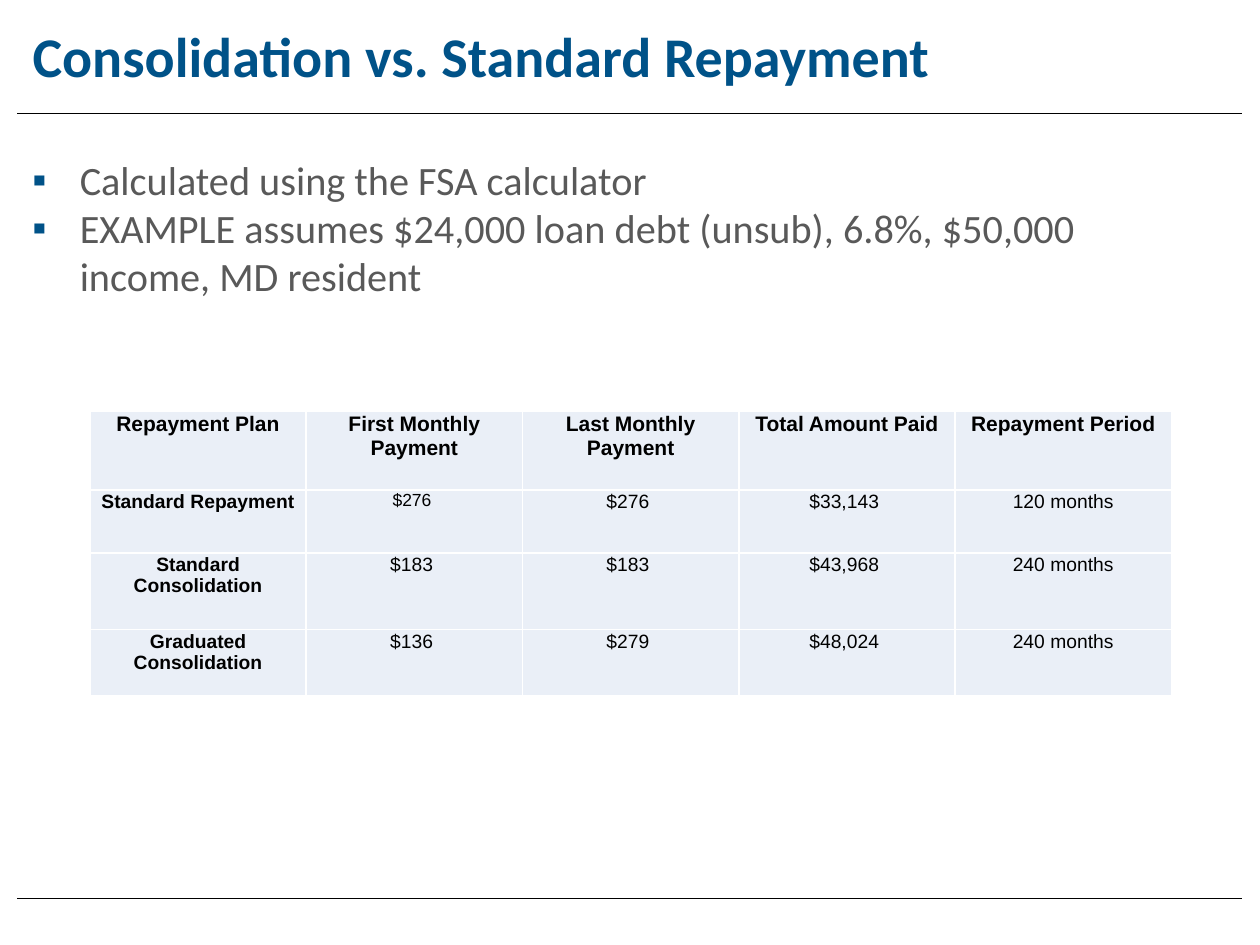
from lxml.etree import SubElement
from pptx import Presentation
from pptx.dml.color import RGBColor
from pptx.enum.shapes import MSO_CONNECTOR
from pptx.enum.text import MSO_ANCHOR, PP_ALIGN
from pptx.oxml import parse_xml
from pptx.oxml.ns import nsdecls, qn
from pptx.util import Pt

HUES = {"head": "005288", "body": "595959", "ink": "000000",
        "cell": "EAEFF7", "edge": "FFFFFF"}


class Deck:
    """Holds the style and the current slide."""

    def __init__(self, wide, high):
        self.show = Presentation()
        self.show.slide_width, self.show.slide_height = Pt(wide), Pt(high)
        self.slide = self.show.slides.add_slide(self.show.slide_layouts[6])

    def style(self, para, hue, **form):
        for key, value in form.items():
            setattr(para.font, key, value)
        para.font.color.rgb = RGBColor.from_string(HUES[hue])

    def rule(self, left, right, top):
        line = self.slide.shapes.add_connector(
            MSO_CONNECTOR.STRAIGHT, Pt(left), Pt(top), Pt(right), Pt(top))
        line.line.width = Pt(0.5)
        line.line.color.rgb = RGBColor.from_string(HUES["ink"])
        SubElement(line.element.spPr, qn("a:effectLst"))

    def bullet(self, para, indent):
        props = para._p.get_or_add_pPr()
        props.set("marL", str(Pt(indent)))
        props.set("indent", str(Pt(-indent)))
        for xml in (f'<a:buClr {nsdecls("a")}><a:srgbClr val="{HUES["head"]}"/></a:buClr>',
                    f'<a:buFont {nsdecls("a")} typeface="Arial"/>',
                    f'<a:buChar {nsdecls("a")} char="▪"/>'):
            props.append(parse_xml(xml))

    def text(self, box, lines, hue, indent=0, **form):
        frame = self.slide.shapes.add_textbox(*map(Pt, box)).text_frame
        frame.word_wrap = True
        for num, line in enumerate(lines):
            para = frame.add_paragraph() if num else frame.paragraphs[0]
            para.text = line
            if indent:
                self.bullet(para, indent)
            self.style(para, hue, **form)

    def edges(self, cell):
        props = cell._tc.get_or_add_tcPr()
        for spot, side in enumerate(("lnL", "lnR", "lnT", "lnB")):
            props.insert(spot, parse_xml(
                f'<a:{side} {nsdecls("a")} w="{Pt(1)}"><a:solidFill>'
                f'<a:srgbClr val="{HUES["edge"]}"/></a:solidFill></a:{side}>'))

    def table(self, left, top, width, highs, rows, size):
        grid = self.slide.shapes.add_table(
            len(rows), len(rows[0]), Pt(left), Pt(top),
            Pt(width * len(rows[0])), Pt(sum(highs))).table
        for col in grid.columns:
            col.width = Pt(width)
        for y, (high, row) in enumerate(zip(highs, rows)):
            grid.rows[y].height = Pt(high)
            for x, words in enumerate(row):
                cell = grid.cell(y, x)
                form = {"text": words, "vertical_anchor": MSO_ANCHOR.TOP,
                        "margin_left": Pt(0.7), "margin_right": Pt(0.7),
                        "margin_top": Pt(0.7), "margin_bottom": 0}
                for key, value in form.items():
                    setattr(cell, key, value)
                cell.fill.solid()
                cell.fill.fore_color.rgb = RGBColor.from_string(HUES["cell"])
                self.edges(cell)
                para = cell.text_frame.paragraphs[0]
                para.alignment = PP_ALIGN.CENTER
                self.style(para, "ink", name="Arial", size=Pt(size(y, x)),
                           bold=y == 0 or x == 0)


def plan_size(y, x):
    """Headings are larger; the first payment is smaller."""
    return 12 if y == 0 else 10 if (y, x) == (1, 1) else 11


def main():
    deck = Deck(720, 540)

    # Rules under the title and above the foot
    for top in (513.4, 64.8):
        deck.rule(10, 710, top)

    # Title
    deck.text((11.5, 8.6, 630, 46), ["Consolidation vs. Standard Repayment"],
              "head", name="Calibri", size=Pt(32), bold=True)

    # Repayment plans
    deck.table(51.4, 235, 123.6, (45, 36, 43.8, 38), [
        ("Repayment Plan", "First Monthly Payment", "Last Monthly Payment",
         "Total Amount Paid", "Repayment Period"),
        ("Standard Repayment", "$276 ", "$276 ", "$33,143 ", "120 months"),
        ("Standard Consolidation", "$183 ", "$183 ", "$43,968 ", "240 months"),
        ("Graduated Consolidation", "$136 ", "$279 ", "$48,024 ", "240 months"),
    ], plan_size)

    # Assumptions
    deck.text((11.5, 85, 623.5, 90.7), [
        "Calculated using the FSA calculator",
        "EXAMPLE assumes $24,000 loan debt (unsub), 6.8%, $50,000 income, MD resident",
    ], "body", indent=27, name="Calibri", size=Pt(23))

    deck.show.save("out.pptx")


if __name__ == "__main__":
    main()
